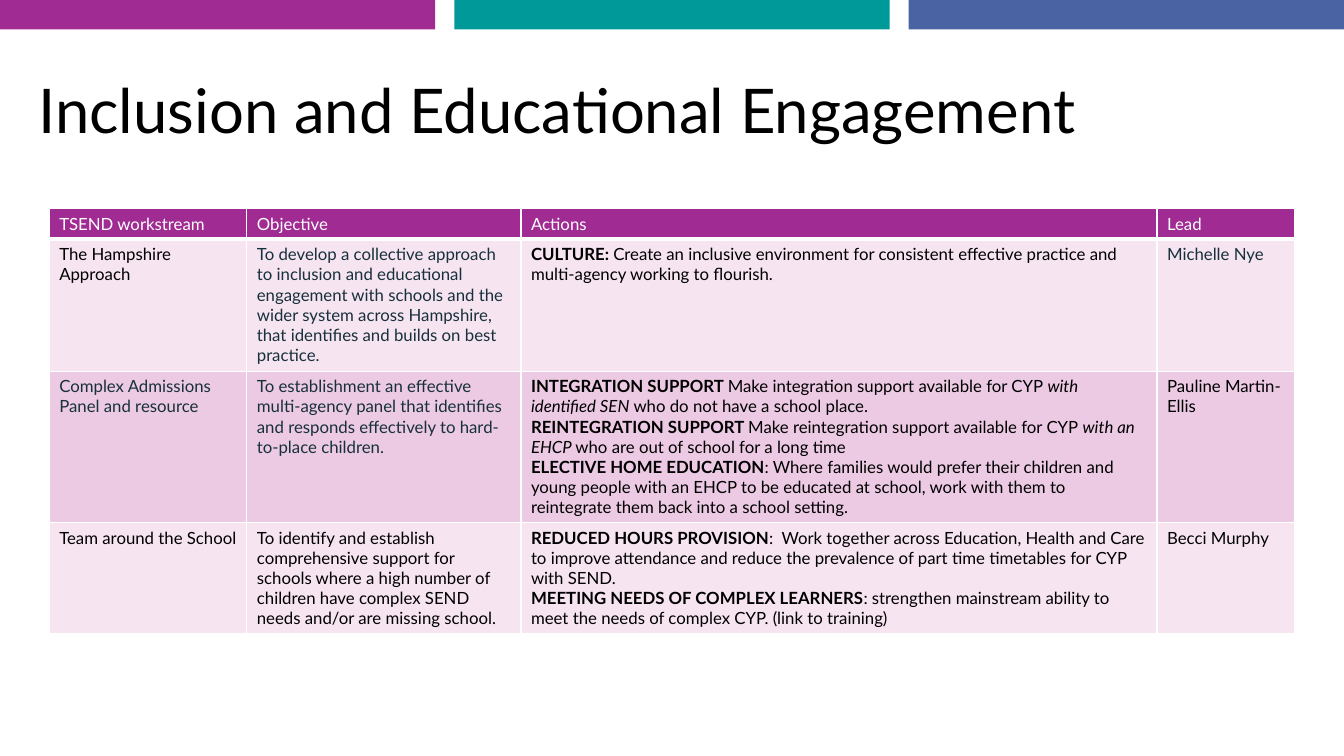
import pptx
import pptx.dml.color
import pptx.enum.shapes
import pptx.enum.text
import pptx.oxml
import pptx.oxml.ns
import pptx.util

Cm = pptx.util.Cm
WIDE, HIGH = 33.87, 19.05
INK, BLACK, WHITE, PLUM = "17303B", "000000", "FFFFFF", "A02B93"
TINTS = ("F6E4F1", "ECCAE3")
COLS = (4.98, 6.91, 16.03, 3.48)
ROWS = (0.74, 3.33, 3.81, 2.79)
HEADS = ("TSEND workstream", "Objective", "Actions", "Lead")

# Each cell is a text colour and its paragraphs; a run is (text, style).
BODY = [
    [
        (BLACK, [[("The Hampshire Approach", "")]]),
        (INK, [[("To develop a collective approach to inclusion and educational "
                 "engagement with schools and the wider system across Hampshire, "
                 "that identifies and builds on best practice.", "")]]),
        (BLACK, [[("CULTURE: ", "b"),
                  ("Create an inclusive environment for consistent effective "
                   "practice and multi-agency working to flourish.", "")]]),
        (INK, [[("Michelle Nye", "")]]),
    ],
    [
        (INK, [[("Complex Admissions Panel and resource", "")]]),
        (INK, [[("To establishment an effective multi-agency panel that identifies "
                 "and responds effectively to hard-to-place children.", "")]]),
        (BLACK, [
            [("INTEGRATION SUPPORT ", "b"),
             ("Make integration support available for CYP ", ""),
             ("with identified SEN ", "i"),
             ("who do not have a school place.", "")],
            [("REINTEGRATION SUPPORT ", "b"),
             ("Make reintegration support available for CYP ", ""),
             ("with an EHCP ", "i"),
             ("who are out of school for a long time", "")],
            [("ELECTIVE HOME EDUCATION", "b"),
             (": Where families would prefer their children and young people with "
              "an EHCP to be educated at school, work with them to reintegrate "
              "them back into a school setting.", "")],
        ]),
        (BLACK, [[("Pauline Martin-Ellis", "")]]),
    ],
    [
        (BLACK, [[("Team around the School", "")]]),
        (BLACK, [[("To identify and establish comprehensive support for schools "
                   "where a high number of children have complex SEND needs and/or "
                   "are missing school.", "")]]),
        (BLACK, [
            [("REDUCED HOURS PROVISION", "b"),
             (":  Work together across Education, Health and Care to improve "
              "attendance and reduce the prevalence of part time timetables for "
              "CYP with SEND.", "")],
            [("MEETING NEEDS OF COMPLEX LEARNERS", "b"),
             (": strengthen mainstream ability to meet the needs of complex CYP. "
              "(link to training)", "")],
        ]),
        (BLACK, [[("Becci Murphy", "")]]),
    ],
]


def paint(part, tone):
    """Give a fill or font the solid colour of a hex string."""
    if hasattr(part, "solid"):
        part.solid()
        part = part.fore_color
    else:
        part = part.color
    part.rgb = pptx.dml.color.RGBColor.from_string(tone)


def style(item, form):
    for name, value in form.items():
        setattr(item, name, value)


def write(para, text, size, tone, mark=""):
    run = para.add_run()
    run.text = text
    style(run.font, {"name": "Lato", "size": pptx.util.Pt(size),
                     "bold": mark == "b", "italic": mark == "i"})
    paint(run.font, tone)


def edge(cell, base):
    """Draw white borders, with a bottom line of base points."""
    props = cell._tc.get_or_add_tcPr()
    for spot, (side, width) in enumerate(zip("LRTB", (1, 1, 1, base))):
        line = pptx.oxml.parse_xml(
            f'<a:ln{side} {pptx.oxml.ns.nsdecls("a")} w="{pptx.util.Pt(width)}">'
            f'<a:solidFill><a:srgbClr val="{WHITE}"/></a:solidFill></a:ln{side}>')
        props.insert(spot, line)


def add_bars(slide, left, top, width, height):
    gap = 0.48
    tones = (PLUM, "009999", "4A63A3")
    span = (width - gap * (len(tones) - 1)) / len(tones)
    for spot, tone in enumerate(tones):
        bar = slide.shapes.add_shape(
            pptx.enum.shapes.MSO_SHAPE.RECTANGLE,
            Cm(left + spot * (span + gap)), Cm(top), Cm(span), Cm(height))
        bar.shadow.inherit = False
        paint(bar.fill, tone)
        bar.line.fill.background()


def add_title(slide, left, top, width, height):
    title = slide.shapes.title
    style(title, {"left": Cm(left), "top": Cm(top),
                  "width": Cm(width), "height": Cm(height)})
    style(title.text_frame, {
        "word_wrap": True,
        "auto_size": pptx.enum.text.MSO_AUTO_SIZE.NONE,
        "vertical_anchor": pptx.enum.text.MSO_ANCHOR.MIDDLE})
    para = title.text_frame.paragraphs[0]
    style(para, {"alignment": pptx.enum.text.PP_ALIGN.LEFT, "line_spacing": 0.9})
    write(para, "Inclusion and Educational Engagement", 44, BLACK)


def fill_cell(cell, tone, paras, back, base):
    paint(cell.fill, back)
    edge(cell, base)
    frame = cell.text_frame
    for spot, runs in enumerate(paras):
        para = frame.add_paragraph() if spot else frame.paragraphs[0]
        for text, mark in runs:
            write(para, text, 12, tone, mark)


def add_plan(slide, left, top, width, height):
    grid = slide.shapes.add_table(len(ROWS), len(COLS), Cm(left), Cm(top),
                                  Cm(width), Cm(height)).table
    grid.horz_banding = False
    for col, size in zip(grid.columns, COLS):
        col.width = Cm(size * width / sum(COLS))
    for row, size in zip(grid.rows, ROWS):
        row.height = Cm(size * height / sum(ROWS))
    lines = [[(WHITE, [[(head, "")]]) for head in HEADS]] + BODY
    for down, line in enumerate(lines):
        back = TINTS[(down - 1) % 2] if down else PLUM
        for across, (tone, paras) in enumerate(line):
            fill_cell(grid.cell(down, across), tone, paras, back, 1 if down else 3)


def main():
    deck = pptx.Presentation()
    style(deck, {"slide_width": Cm(WIDE), "slide_height": Cm(HIGH)})
    slide = deck.slides.add_slide(deck.slide_layouts[5])
    add_bars(slide, 0, 0, WIDE, 0.74)
    add_plan(slide, 1.24, 5.26, 31.4, 10.67)
    add_title(slide, 0.71, 1.02, 32.44, 3.68)
    deck.save("out.pptx")


if __name__ == "__main__":
    main()
